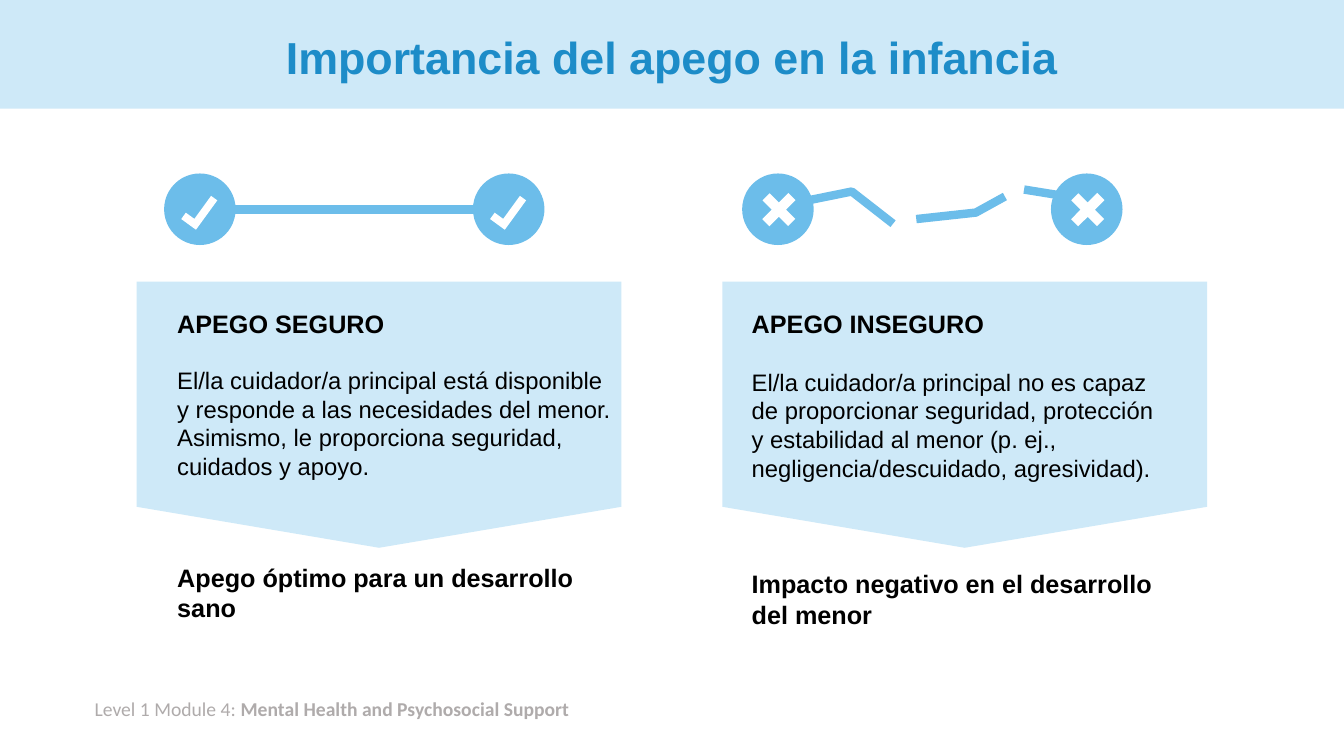
"""Build a slide comparing secure and insecure attachment in childhood."""
from lxml import etree
from pptx import Presentation
from pptx import util as u
from pptx.dml.color import RGBColor
from pptx.enum import shapes, text
from pptx.oxml.ns import qn

COLORS = {"pale": "CEE9F8", "sky": "6CBDEA", "title": "1D8CC8",
          "black": "000000", "white": "FFFFFF", "gray": "AFABAB"}
KIND = shapes.MSO_SHAPE

presentation = Presentation()
presentation.slide_width, presentation.slide_height = u.Pt(960), u.Pt(540)
slide = presentation.slides.add_slide(presentation.slide_layouts[6])


def add_filled(kind, left, top, width, height, color, rotation=0, adjustments=()):
    shape = slide.shapes.add_shape(kind, *map(u.Pt, (left, top, width, height)))
    shape.shadow.inherit = False
    shape.fill.solid()
    shape.fill.fore_color.rgb = RGBColor.from_string(COLORS[color])
    shape.line.fill.background()
    shape.rotation = rotation
    for index, value in enumerate(adjustments):
        shape.adjustments[index] = value


def add_text(left, top, width, height, paragraphs, color, font="Arial"):
    box = slide.shapes.add_textbox(*map(u.Pt, (left, top, width, height)))
    frame = box.text_frame
    frame.word_wrap = True
    for index, (gap, runs) in enumerate(paragraphs):
        paragraph = frame.add_paragraph() if index else frame.paragraphs[0]
        paragraph.space_before = u.Pt(gap)
        for words, size, bold in runs:
            run = paragraph.add_run()
            run.text = words
            run.font.name = font
            run.font.size = u.Pt(size)
            run.font.bold = bold
            run.font.color.rgb = RGBColor.from_string(COLORS[color])
    return frame


add_filled(KIND.RECTANGLE, 0, 0, 960, 77.6, "pale")
title = add_text(60.5 + 5.7, 8.6, 828, 68.4,
                 [(0, [("Importancia del apego en la infancia", 32, True)])], "title")
title.vertical_anchor = text.MSO_ANCHOR.MIDDLE
title.paragraphs[0].alignment = text.PP_ALIGN.CENTER
title.paragraphs[0].line_spacing = 0.9
add_text(60.5, 494.6, 445, 24.5,
         [(0, [("Level 1 Module 4: ", 14, False),
               ("Mental Health and Psychosocial Support", 14, True)])], "gray", "Calibri")

columns = [
    (175.7, 119.5, 324.7, 237.6, 19.5, "APEGO SEGURO",
     "El/la cuidador/a principal está disponible y responde a las necesidades del menor. "
     "Asimismo, le proporciona seguridad, cuidados y apoyo.",
     "Apego óptimo para un desarrollo sano"),
    (594, 529.9, 306.7, 242.6, 20.7, "APEGO INSEGURO",
     "El/la cuidador/a principal no es capaz de proporcionar seguridad, protección y "
     "estabilidad al menor (p. ej., negligencia/descuidado, agresividad).",
     "Impacto negativo en el desarrollo del menor"),
]
for panel_left, text_left, width, height, gap, heading, body, outcome in columns:
    add_filled(KIND.PENTAGON, panel_left, 123.1, 190.1, 346.3, "pale", 90, [0.154])
    add_text(text_left, 216.7, width, height,
             [(0, [(heading, 18, True)]), (gap, [(body, 17, False)]),
              (3 * gap, [(outcome, 18, True)])], "black")

check = (KIND.CORNER, 12.2, 19.4, 25.9, 13, 306, [0.422, 0.433])
cross = (KIND.MATH_PLUS, 8.6, 7.9, 35.3, 36, 45, [0.204])
for first_left, (kind, dx, dy, width, height, rotation, adjustments) in (
        (117.2, check), (530.1, cross)):
    for circle_left in (first_left, first_left + 220.6):
        add_filled(KIND.OVAL, circle_left, 123.9, 51.1, 51.1, "sky")
        add_filled(kind, circle_left + dx, 123.9 + dy, width, height, "white",
                   rotation, adjustments)

links = []
for ends in ((167.8, 149.5, 337.7, 149.5), (731.5, 135.4, 757.5, 139.6)):
    links.append(slide.shapes.add_connector(shapes.MSO_CONNECTOR.STRAIGHT, *map(u.Pt, ends)))
for start, *bends in (((569.5, 144.7), (608.4, 136.8), (637.9, 159.8)),
                      ((654.5, 156.5), (697, 151.9), (717.8, 140.4))):
    builder = slide.shapes.build_freeform(*map(u.Pt, start))
    builder.add_line_segments([(u.Pt(x), u.Pt(y)) for x, y in bends], close=False)
    broken_link = builder.convert_to_shape()
    broken_link.fill.background()
    links.append(broken_link)
for link in links:
    link.line.color.rgb = RGBColor.from_string(COLORS["sky"])
    link.line.width = u.Pt(6)
    etree.SubElement(link._element.spPr, qn("a:effectLst"))

presentation.save("out.pptx")
